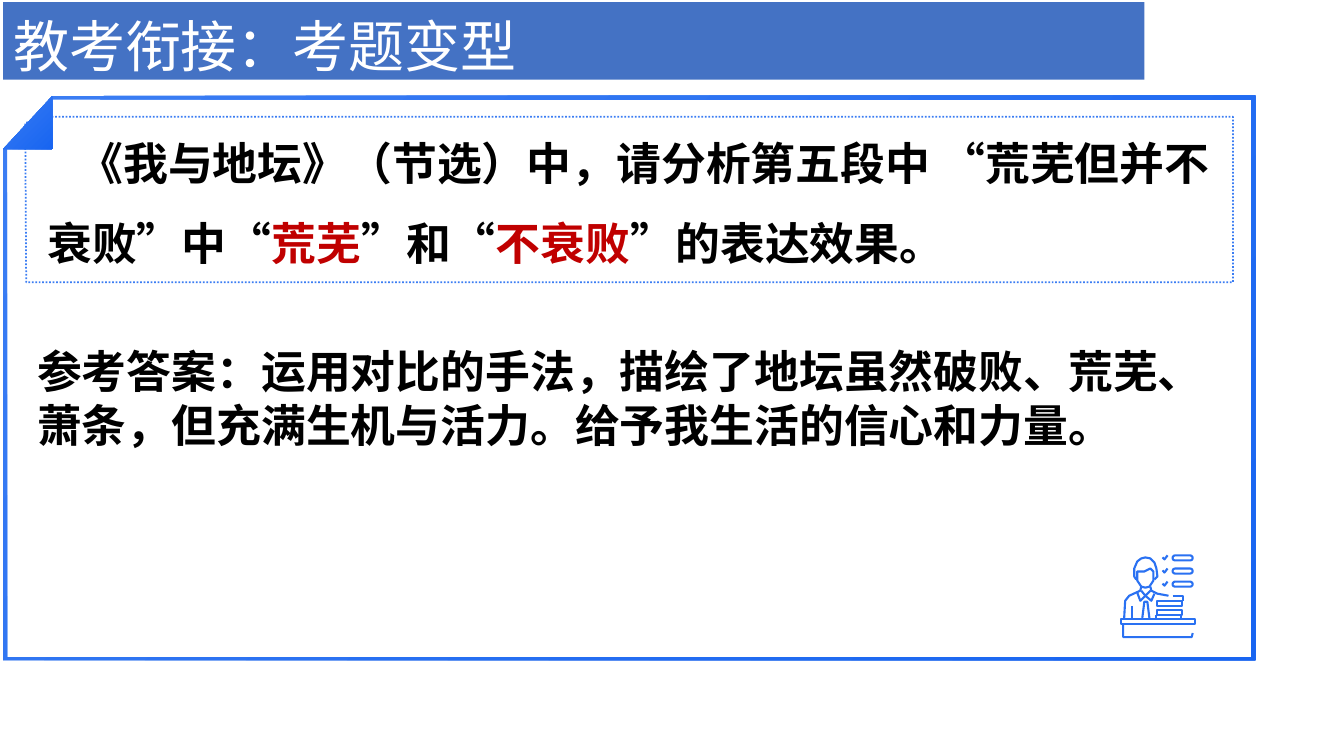
"""Build the exam-variation slide with its framed question and answer."""
from dataclasses import dataclass

from pptx import Presentation
from pptx.dml.color import RGBColor
from pptx.dml.fill import FillFormat
from pptx.enum.dml import MSO_LINE
from pptx.enum.shapes import MSO_SHAPE
from pptx.enum.text import MSO_ANCHOR, MSO_AUTO_SIZE, PP_ALIGN
from pptx.oxml import parse_xml
from pptx.oxml.ns import nsdecls
from pptx.shapes.autoshape import Shape
from pptx.slide import Slide
from pptx.util import Inches, Pt

FACE = "Noto Sans CJK SC"
PALE, DEEP, INK, RED = "3B7DF3", "1865F1", "000000", "C00000"
MID = "2A71F2"
Point = tuple[float, float]
Run = tuple[str, str]


@dataclass
class Note:
    """A text block with coloured runs."""

    box: tuple[float, float, float, float]
    runs: list[Run]
    lead: float
    indent: float = 0


@dataclass
class Panel:
    """A closed outline, with either a gradient or a dotted edge."""

    points: list[Point]
    solid: bool = True


PANELS = [
    Panel([(12.45, 6.55), (0.03, 6.55), (0.03, 1.48), (0.07, 1.48),
           (0.07, 6.52), (12.41, 6.52), (12.41, 0.99), (0.52, 0.99),
           (0.52, 0.95), (12.45, 0.95)]),
    Panel([(0.38, 1.19), (0.44, 1.16), (12.23, 1.16), (12.23, 2.8),
           (0.26, 2.8), (0.25, 1.22)], False),
    Panel([(0.52, 0.95), (0.52, 1.48), (0.03, 1.48)]),
]
NOTES = [
    Note((0.37, 1.04, 12.02, 1.59),
         [("《我与地坛》（节选）中，请分析第五段中 “荒芜但并不衰败”中“", INK),
          ("荒芜", RED), ("”和“", INK), ("不衰败", RED),
          ("”的表达效果。", INK)], 57, 0.31),
    Note((0.27, 3.36, 11.79, 1.48),
         [("参考答案：运用对比的手法，描绘了地坛虽然破败、荒芜、萧条，"
           "但充满生机与活力。给予我生活的信心和力量。", INK)], 38.5),
]
DESK = [
    [(11.12, 6.14), (11.85, 6.14), (11.85, 6.19), (11.12, 6.19), (11.12, 6.14)],
    [(11.14, 6.19), (11.14, 6.32), (11.82, 6.32), (11.83, 6.28)],
]
HEAD = [
    [(11.28, 5.67), (11.28, 5.76), (11.32, 5.82), (11.36, 5.83),
     (11.4, 5.82), (11.44, 5.76), (11.44, 5.67), (11.41, 5.64),
     (11.35, 5.67), (11.28, 5.67)],
    [(11.27, 5.75), (11.25, 5.72), (11.25, 5.64), (11.28, 5.57),
     (11.32, 5.54), (11.36, 5.53), (11.41, 5.54), (11.45, 5.58),
     (11.47, 5.64), (11.48, 5.72), (11.45, 5.75)],
]
COAT = [
    [(11.15, 6.13), (11.16, 5.96), (11.2, 5.91), (11.31, 5.86),
     (11.32, 5.82)],
    [(11.41, 5.82), (11.42, 5.86), (11.48, 5.89), (11.59, 5.91)],
    [(11.28, 5.88), (11.31, 5.96), (11.36, 5.91), (11.42, 5.96),
     (11.45, 5.89)],
    [(11.32, 5.86), (11.36, 5.91), (11.41, 5.86)],
    [(11.33, 6.13), (11.35, 5.97), (11.38, 5.97), (11.4, 6.13)],
    [(11.23, 6.01), (11.23, 6.13)],
]
BOOKS = [[(11.48, y), (11.72, y), (11.72, y + 0.05), (11.48, y + 0.05),
          (11.48, y)] for y in (5.96, 6.05)]
COVER = [[(11.63, 5.91), (11.73, 5.91), (11.73, 5.96)],
         [(11.47, 6.1), (11.47, 6.13)], [(11.71, 6.1), (11.71, 6.13)]]


def color(code: str) -> RGBColor:
    """Turn a hex string into a colour."""
    return RGBColor.from_string(code)


def blend(fill: FillFormat) -> None:
    """Apply the diagonal blue gradient."""
    fill.gradient()
    fill.gradient_angle = 315
    for stop, code in zip(fill.gradient_stops, (PALE, DEEP)):
        stop.color.rgb = color(code)


def trace(slide: Slide, paths: list[list[Point]], close: bool) -> Shape:
    """Build one shape from straight paths given in inches."""
    first, *rest = [[(Inches(x), Inches(y)) for x, y in path]
                    for path in paths]
    pen = slide.shapes.build_freeform(*first[0], scale=1.0)
    pen.add_line_segments(first[1:], close=close)
    for path in rest:
        pen.move_to(*path[0])
        pen.add_line_segments(path[1:], close=close)
    shape = pen.convert_to_shape()
    shape.shadow.inherit = False
    return shape


def edge(shape: Shape, code: str, width: float) -> None:
    """Leave a shape hollow and colour its edge."""
    shape.fill.background()
    shape.line.color.rgb = color(code)
    shape.line.width = Pt(width)


def write(shape: Shape, runs: list[Run], size: float, bold: bool,
          lead: float, indent: float = 0) -> None:
    """Fill a shape with one left-aligned paragraph."""
    frame = shape.text_frame
    setup = {"word_wrap": True, "auto_size": MSO_AUTO_SIZE.NONE,
             "vertical_anchor": MSO_ANCHOR.TOP}
    for key, value in setup.items():
        setattr(frame, key, value)
    para = frame.paragraphs[0]
    para.alignment = PP_ALIGN.LEFT
    para.line_spacing = Pt(lead)
    if indent:
        para._p.get_or_add_pPr().set("indent", str(Inches(indent)))
    look = {"name": FACE, "size": Pt(size), "bold": bold}
    for text, code in runs:
        run = para.add_run()
        run.text = text
        for key, value in look.items():
            setattr(run.font, key, value)
        run.font.color.rgb = color(code)
        east = parse_xml(f'<a:ea {nsdecls("a")} typeface="{FACE}"/>')
        run.font._element.find(".//{*}latin").addnext(east)


def banner(slide: Slide) -> None:
    """Place the title on its blue band."""
    title = slide.shapes.title
    place = {"left": 0.03, "top": 0.02, "width": 11.32, "height": 0.77}
    for key, value in place.items():
        setattr(title, key, Inches(value))
    title.fill.solid()
    title.fill.fore_color.rgb = color("4472C4")
    write(title, [("教考衔接：考题变型", "FFFFFF")], 40, False, 51)


def board(slide: Slide, panel: Panel) -> None:
    """Draw one part of the page frame."""
    shape = trace(slide, [panel.points], True)
    if panel.solid:
        blend(shape.fill)
        shape.line.fill.background()
    else:
        edge(shape, PALE, 1.25)
        shape.line.dash_style = MSO_LINE.ROUND_DOT


def tutor(slide: Slide) -> None:
    """Draw the reader at a desk beside a checklist."""
    edge(trace(slide, DESK + HEAD + COAT + BOOKS + COVER, False), MID, 1.5)
    for row in range(3):
        y = 5.51 + 0.13 * row
        pill = slide.shapes.add_shape(
            MSO_SHAPE.ROUNDED_RECTANGLE, Inches(11.63), Inches(y),
            Inches(0.2), Inches(0.05))
        pill.shadow.inherit = False
        pill.adjustments[0] = 0.5
        edge(pill, MID, 1.5)
        tick = [(11.53, y + 0.02), (11.55, y + 0.04), (11.58, y)]
        edge(trace(slide, [tick], False), MID, 1.5)


def main() -> None:
    """Assemble and save the slide."""
    deck = Presentation()
    deck.slide_width, deck.slide_height = Inches(13.33), Inches(7.5)
    slide = deck.slides.add_slide(deck.slide_layouts[5])
    banner(slide)
    for panel in PANELS:
        board(slide, panel)
    tutor(slide)
    for note in NOTES:
        box = slide.shapes.add_textbox(*map(Inches, note.box))
        write(box, note.runs, 32, True, note.lead, note.indent)
    deck.save("out.pptx")


if __name__ == "__main__":
    main()
